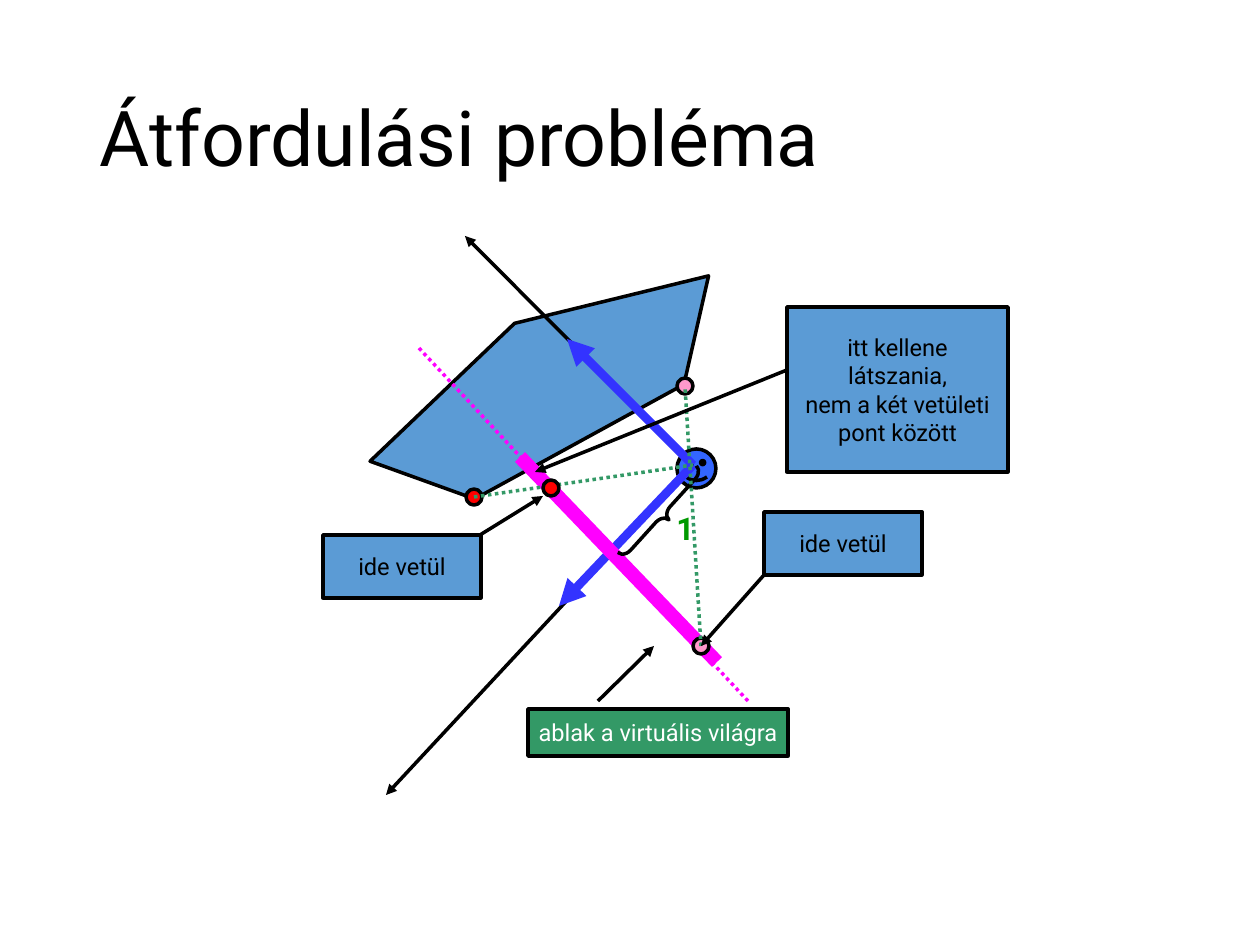
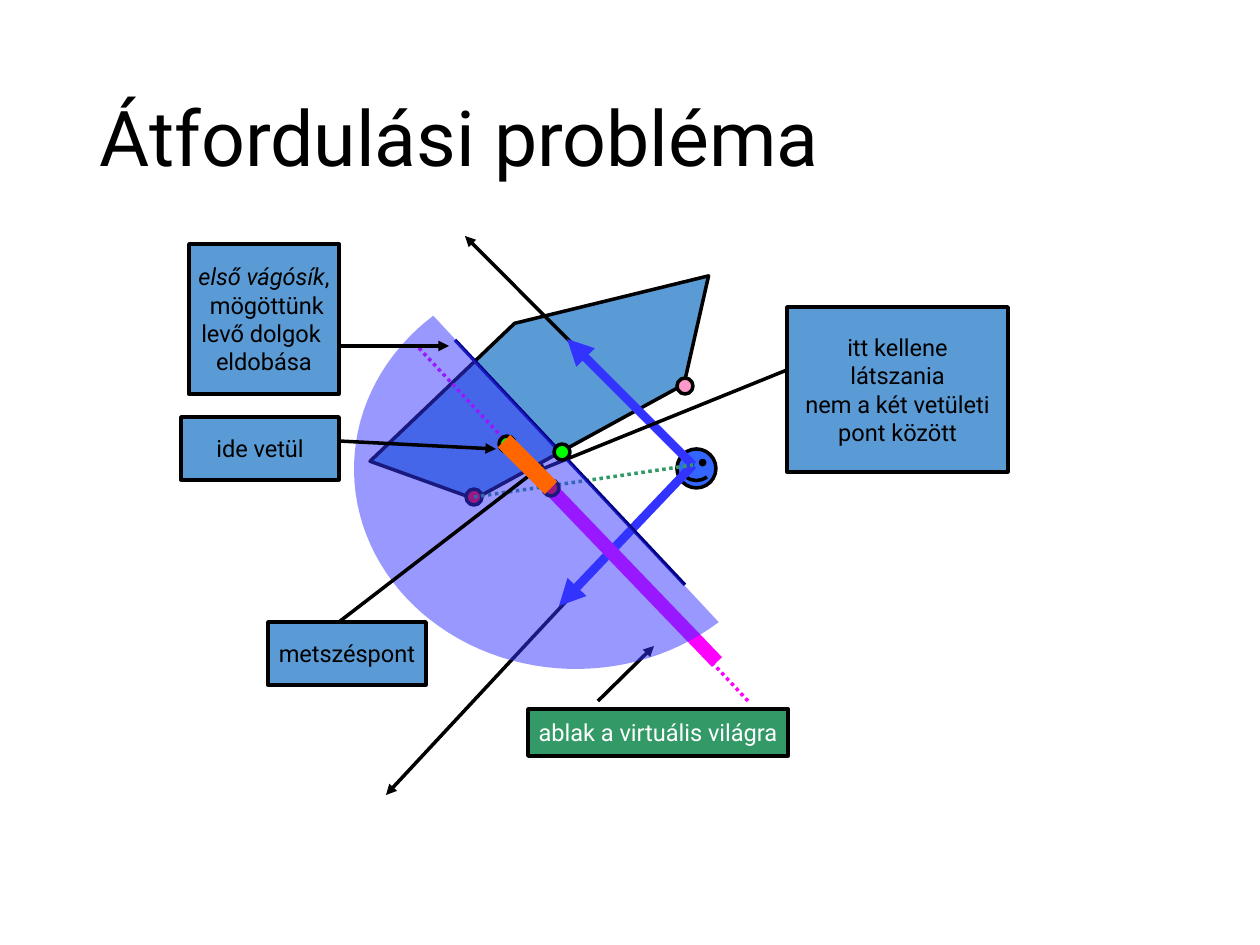
import math

import lxml.etree
import pptx
import pptx.dml.color
import pptx.enum.dml
import pptx.enum.shapes
import pptx.enum.text
import pptx.oxml
import pptx.oxml.ns
import pptx.util

PX = 914400 / 126
SLIDE_SIZE = (1260, 945)
TITLE_BOX = (87, 50, 1086, 183)
DIAGRAM_BOX = (180, 230, 830, 570)
FONT = "Roboto"
COLOURS = {
    "black": "000000", "white": "FFFFFF", "object": "5B9BD5", "window": "FF00FF",
    "face": "3366FF", "frustum": "3333FF", "clip_line": "000080", "green": "339966",
    "distance": "009900", "red": "FF0000", "pink": "FF99CC", "lime": "00FF00",
    "orange": "FF6600",
}
SHAPES = pptx.enum.shapes.MSO_SHAPE
DOT_SIZE = 16
LABEL_SIZE = (158, 63)
EYE = (513, 235)
OBJECT_POINT = (294, 267)
FRONT_POINT = (505, 156)
PROJECTED_POINT = (371, 258)
TITLE = "Átfordulási probléma"


def emu(*lengths):
    return [round(length * PX) for length in lengths]


def rgb(name):
    return pptx.dml.color.RGBColor.from_string(COLOURS[name])


def set_format(target, **values):
    for name, value in values.items():
        setattr(target, name, value)


def add_text(paragraph, text, size, colour, **font_values):
    run = paragraph.add_run()
    run.text = text
    set_format(run.font, name=FONT, size=pptx.util.Pt(size), **font_values)
    run.font.color.rgb = rgb(colour)


def add_child(parent, tag, **attributes):
    child = lxml.etree.SubElement(parent, pptx.oxml.ns.qn(tag))
    for name, value in attributes.items():
        child.set(name, value)


class Diagram:
    """Draws on a slide, measuring every place from the corner of its box."""

    def __init__(self, slide, box):
        self.shapes = slide.shapes
        self.left, self.top = box[:2]

    def place(self, x, y):
        return emu(self.left + x, self.top + y)

    def shape(self, kind, box, fill, rotation=0, adjustments=()):
        x, y, width, height = box
        shape = self.shapes.add_shape(kind, *self.place(x, y), *emu(width, height))
        set_format(shape, rotation=rotation)
        shape.shadow.inherit = False
        for index, value in enumerate(adjustments):
            shape.adjustments[index] = value
        if fill:
            shape.fill.solid()
            shape.fill.fore_color.rgb = rgb(fill)
        else:
            shape.fill.background()
        shape.line.color.rgb = rgb("black")
        shape.line.width = pptx.util.Pt(2)
        return shape

    def dot(self, centre, fill):
        x, y = (value - DOT_SIZE / 2 for value in centre)
        self.shape(SHAPES.OVAL, (x, y, DOT_SIZE, DOT_SIZE), fill)

    def line(self, start, end, colour="black", width=2, dotted=False, arrow=False):
        line = self.shapes.add_connector(
            pptx.enum.shapes.MSO_CONNECTOR.STRAIGHT, *self.place(*start), *self.place(*end))
        line.line.color.rgb = rgb(colour)
        line.line.width = pptx.util.Pt(width)
        if dotted:
            line.line.dash_style = pptx.enum.dml.MSO_LINE.ROUND_DOT
        if arrow:
            add_child(line.line._get_or_add_ln(), "a:tailEnd", type="triangle")
        add_child(line._element.spPr, "a:effectLst")

    def arrow(self, start, end, colour="black", width=2):
        self.line(start, end, colour, width, arrow=True)

    def label(self, box, lines, fill="object", colour="black", italic=""):
        """Boxed note; the words in italic open its first line."""
        frame = self.shape(SHAPES.RECTANGLE, box, fill).text_frame
        set_format(frame, word_wrap=False,
                   vertical_anchor=pptx.enum.text.MSO_ANCHOR.MIDDLE)
        for index, text in enumerate(lines):
            paragraph = frame.add_paragraph() if index else frame.paragraphs[0]
            paragraph.alignment = pptx.enum.text.PP_ALIGN.CENTER
            if italic and not index:
                add_text(paragraph, italic, 13.5, colour, italic=True)
            add_text(paragraph, text, 13.5, colour)

    def small_label(self, x, y, text):
        self.label((x, y, *LABEL_SIZE), [text])

    def half_space(self, centre, radii, first_angle):
        """Translucent half ellipse, running clockwise from first_angle."""
        points = []
        for angle in range(first_angle, first_angle + 181, 3):
            turn = math.radians(angle)
            points.append(self.place(centre[0] + radii[0] * math.cos(turn),
                                     centre[1] + radii[1] * math.sin(turn)))
        builder = self.shapes.build_freeform(*points[0])
        builder.add_line_segments(points[1:], close=True)
        shape = builder.convert_to_shape()
        shape.shadow.inherit = False
        shape.line.fill.background()
        shape.fill.solid()
        shape.fill.fore_color.rgb = rgb("frustum")
        colour = shape._element.spPr.find(".//" + pptx.oxml.ns.qn("a:srgbClr"))
        add_child(colour, "a:alpha", val="50000")


def add_title(slide, box):
    title = slide.shapes.title
    set_format(title, **dict(zip(("left", "top", "width", "height"), emu(*box))))
    set_format(title.text_frame, word_wrap=True,
               vertical_anchor=pptx.enum.text.MSO_ANCHOR.MIDDLE)
    paragraph = title.text_frame.paragraphs[0]
    set_format(paragraph, alignment=pptx.enum.text.PP_ALIGN.LEFT, line_spacing=0.9)
    add_text(paragraph, TITLE, 44, "black")


def draw_scene(diagram):
    """Object, viewer, frustum and window, which both slides show."""
    diagram.shape(SHAPES.REGULAR_PENTAGON, (174, 85, 386, 135), "object", 331.3)
    diagram.dot(OBJECT_POINT, "red")
    diagram.dot(FRONT_POINT, "pink")
    diagram.shape(SHAPES.SMILEY_FACE, (497, 219, 39, 39), "face", adjustments=[0.047])
    for end in ((285, 6), (206, 565)):
        diagram.arrow(EYE, end)
    for end in ((387, 109), (379, 376)):
        diagram.arrow(EYE, end, "frustum", 5)
    diagram.line((340, 227), (537, 432), "window", 8)
    diagram.label((348, 479, 260, 47), ["ablak a virtuális világra"], "green", "white")
    diagram.arrow((418, 471), (474, 416))
    diagram.line((568, 471), (237, 116), "window", dotted=True)
    diagram.line(OBJECT_POINT, EYE, "green", dotted=True)
    diagram.dot(PROJECTED_POINT, "red")


def draw_expected_place(diagram, second_line):
    diagram.label((607, 77, 221, 165),
                  ["itt kellene", second_line, "nem a két vetületi", "pont között"])
    diagram.arrow((607, 140), (355, 242))


def draw_distance(diagram):
    """Brace from the eye to the window, with its length."""
    diagram.shape(SHAPES.RIGHT_BRACE, (475, 226, 16, 117), None, 42.2, [0.649, 0.5])
    box = diagram.shapes.add_textbox(*diagram.place(484, 273), *emu(45, 50))
    box.text_frame.word_wrap = False
    add_text(box.text_frame.paragraphs[0], "1", 18, "distance", bold=True)


def draw_wrong_projection(diagram):
    window_point = (521, 416)
    draw_distance(diagram)
    diagram.small_label(143, 305, "ide vetül")
    diagram.arrow((300, 305), (363, 266))
    diagram.dot(window_point, "pink")
    diagram.line(window_point, FRONT_POINT, "green", dotted=True)
    diagram.small_label(584, 282, "ide vetül")
    diagram.arrow((584, 345), window_point)
    draw_expected_place(diagram, "látszania,")


def draw_clipping(diagram):
    diagram.small_label(88, 392, "metszéspont")
    draw_expected_place(diagram, "látszania")
    diagram.line((505, 355), (275, 110), "clip_line")
    diagram.half_space((396, 239), (222, 200), 50)
    diagram.label((9, 14, 150, 150),
                  [",", " mögöttünk", "levő dolgok ", "eldobása"], italic="első vágósík")
    diagram.arrow((159, 116), (269, 116))
    diagram.dot((382, 222), "lime")
    diagram.arrow((159, 392), (363, 235))
    diagram.dot((327, 214), "lime")
    diagram.small_label(1, 187, "ide vetül")
    diagram.arrow((159, 211), (316, 219))
    diagram.line((324, 211), PROJECTED_POINT, "orange", 10)


def main():
    presentation = pptx.Presentation()
    set_format(presentation, **dict(zip(("slide_width", "slide_height"), emu(*SLIDE_SIZE))))
    for draw_details in (draw_wrong_projection, draw_clipping):
        slide = presentation.slides.add_slide(presentation.slide_layouts[5])
        add_title(slide, TITLE_BOX)
        diagram = Diagram(slide, DIAGRAM_BOX)
        draw_scene(diagram)
        draw_details(diagram)
    presentation.save("out.pptx")


if __name__ == "__main__":
    main()
